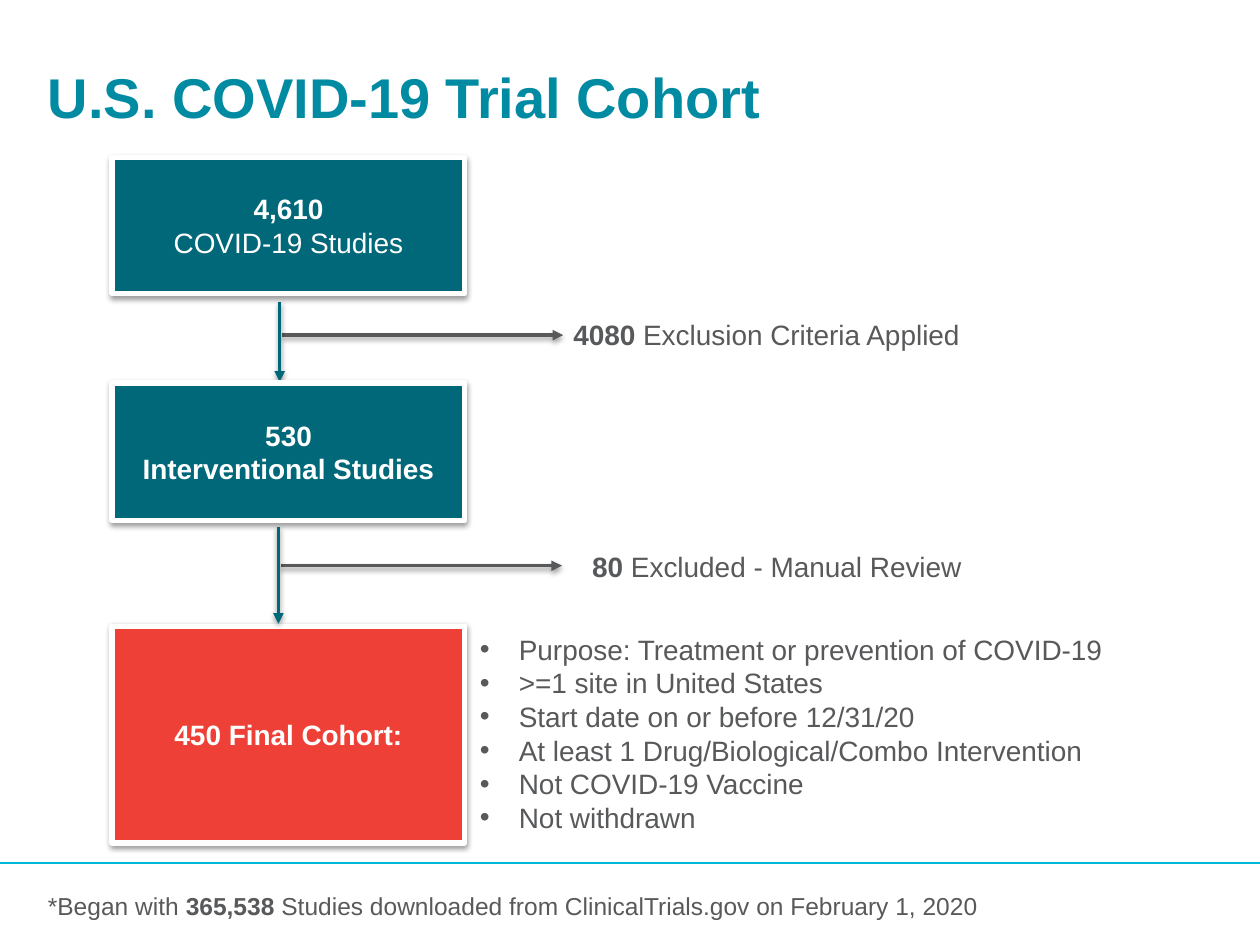
from lxml import etree
from pptx import Presentation
from pptx.dml.color import RGBColor
from pptx.enum.shapes import MSO_CONNECTOR as CONN, MSO_SHAPE as SHAPE
from pptx.enum.text import MSO_ANCHOR as ANCHOR, PP_ALIGN as ALIGN
from pptx.oxml.ns import qn
from pptx.util import Inches, Pt

WHITE = RGBColor(0xFF, 0xFF, 0xFF)
GRAY = RGBColor(0x58, 0x59, 0x5B)
TEAL = RGBColor(0x00, 0x68, 0x79)
TITLE_TEAL = RGBColor(0x00, 0x8B, 0xA2)
RULE_BLUE = RGBColor(0x00, 0xB7, 0xD5)
RED = RGBColor(0xEE, 0x40, 0x36)

BOX_LEFT, BOX_WIDTH = 0.89, 2.8
CRITERIA = [
    "Purpose: Treatment or prevention of COVID-19",
    ">=1 site in United States",
    "Start date on or before 12/31/20",
    "At least 1 Drug/Biological/Combo Intervention",
    "Not COVID-19 Vaccine",
    "Not withdrawn",
]


class CohortSlide:
    font = "Arial"
    size = 16

    def __init__(self, prs):
        self.s = prs.slides.add_slide(prs.slide_layouts[6])

    def effects(self, shape, alpha=None, dist=1.6):
        """Replace the theme shadow by a soft one below, or by none."""
        sp_pr = shape._element.spPr
        for old in sp_pr.findall(qn("a:effectLst")):
            sp_pr.remove(old)
        effects = etree.SubElement(sp_pr, qn("a:effectLst"))
        if alpha:
            shadow = etree.SubElement(
                effects, qn("a:outerShdw"), blurRad=str(Pt(3.1)),
                dist=str(Pt(dist)), dir="5400000", rotWithShape="0")
            color = etree.SubElement(shadow, qn("a:srgbClr"), val="000000")
            etree.SubElement(color, qn("a:alpha"), val=str(alpha * 1000))

    def add_runs(self, p, runs, color, size=None):
        """Fill a paragraph with (text, bold) runs."""
        for text, bold in runs:
            r = p.add_run()
            r.text = text
            r.font.name = self.font
            r.font.size = Pt(size or self.size)
            r.font.bold = bold
            r.font.color.rgb = color

    def margins(self, tf, inset):
        tf.margin_left = tf.margin_right = Inches(inset)
        tf.margin_top = tf.margin_bottom = Inches(inset)

    def text(self, x, y, w, h, runs, color=GRAY, size=None, anchor=ANCHOR.TOP):
        tf = self.s.shapes.add_textbox(
            Inches(x), Inches(y), Inches(w), Inches(h)).text_frame
        tf.word_wrap = True
        tf.vertical_anchor = anchor
        self.margins(tf, 0)
        self.add_runs(tf.paragraphs[0], runs, color, size)

    def bullets(self, x, y, w, h, items):
        tf = self.s.shapes.add_textbox(
            Inches(x), Inches(y), Inches(w), Inches(h)).text_frame
        tf.word_wrap = False
        indent = Inches(0.31)
        for i, item in enumerate(items):
            p = tf.add_paragraph() if i else tf.paragraphs[0]
            p_pr = p._p.get_or_add_pPr()
            p_pr.set("marL", str(indent))
            p_pr.set("indent", str(-indent))
            etree.SubElement(p_pr, qn("a:buFont"), typeface=self.font)
            etree.SubElement(p_pr, qn("a:buChar"), char="•")
            self.add_runs(p, [(item, False)], GRAY)

    def rect(self, x, y, w, h, fill):
        sp = self.s.shapes.add_shape(
            SHAPE.RECTANGLE, Inches(x), Inches(y), Inches(w), Inches(h))
        sp.fill.solid()
        sp.fill.fore_color.rgb = fill
        sp.line.fill.background()
        return sp

    def box(self, y, h, fill, lines):
        sp = self.rect(BOX_LEFT, y, BOX_WIDTH, h, fill)
        sp.line.color.rgb = WHITE
        sp.line.width = Pt(3)
        self.effects(sp, 38)
        tf = sp.text_frame
        tf.word_wrap = True
        tf.vertical_anchor = ANCHOR.MIDDLE
        self.margins(tf, 0.01)
        for i, line in enumerate(lines):
            p = tf.add_paragraph() if i else tf.paragraphs[0]
            p.alignment = ALIGN.CENTER
            self.add_runs(p, [line], WHITE)

    def line(self, x1, y1, x2, y2, color, width):
        cx = self.s.shapes.add_connector(
            CONN.STRAIGHT, Inches(x1), Inches(y1), Inches(x2), Inches(y2))
        cx.line.color.rgb = color
        cx.line.width = Pt(width)
        self.effects(cx)
        return cx

    def arrow(self, x1, y1, x2, y2, color):
        cx = self.line(x1, y1, x2, y2, color, 2)
        ln = cx._element.spPr.find(qn("a:ln"))
        etree.SubElement(ln, qn("a:tailEnd"), type="triangle")
        self.effects(cx, 38)

    def branch(self, x, top, bottom, side_y):
        """Arrow down to the next box with a side arrow to the exclusions."""
        self.arrow(x + 0.02, side_y, x + 2.25, side_y, GRAY)
        self.arrow(x, top, x, bottom, TEAL)


def main():
    prs = Presentation()
    prs.slide_width, prs.slide_height = Inches(10), Inches(7.5)
    slide = CohortSlide(prs)

    footer = slide.rect(0, 6.83, 10, 0.67, WHITE)
    slide.effects(footer, 35, 1.8)
    slide.line(0, 6.85, 10, 6.85, RULE_BLUE, 0.75)
    slide.text(0.38, 6.96, 8.33, 0.45, [
        ("*Began with ", False), ("365,538", True),
        (" Studies downloaded from ClinicalTrials.gov on February 1, 2020", False),
    ], size=14, anchor=ANCHOR.MIDDLE)
    slide.text(0.38, 0.5, 9.25, 0.86, [("U.S. COVID-19 Trial Cohort", True)],
               TITLE_TEAL, 32)

    slide.text(4.55, 2.52, 3.23, 0.27,
               [("4080", True), (" Exclusion Criteria Applied", False)])
    slide.text(4.7, 4.36, 3.23, 0.27,
               [("80 ", True), ("Excluded - Manual Review", False)])

    slide.branch(2.22, 2.4, 3.03, 2.66)
    slide.box(1.25, 1.08, TEAL, [("4,610", True), ("COVID-19 Studies", False)])
    slide.box(3.04, 1.09, TEAL, [("530", True), ("Interventional Studies", True)])
    slide.box(4.97, 1.72, RED, [("450 Final Cohort:", True)])
    slide.bullets(3.71, 4.97, 5.21, 1.72, CRITERIA)
    slide.branch(2.21, 4.18, 4.95, 4.49)

    prs.save("out.pptx")


if __name__ == "__main__":
    main()
